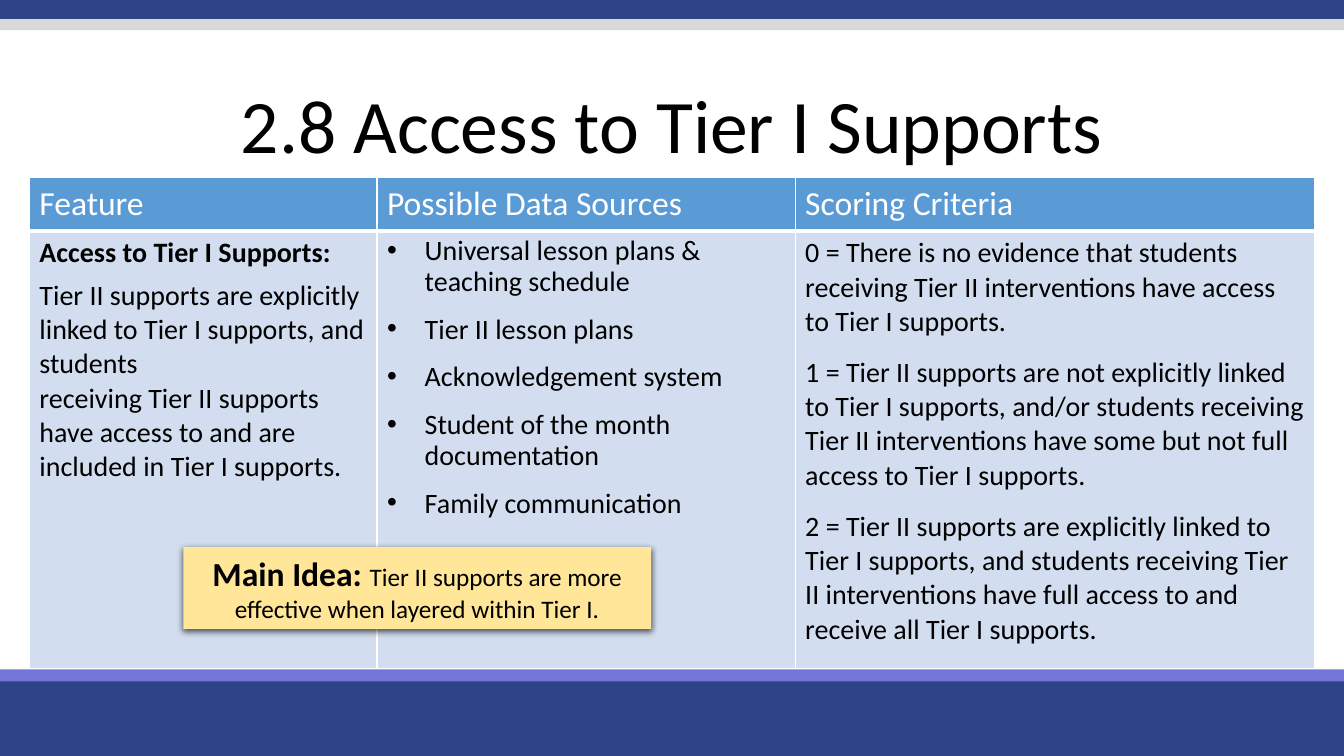
from lxml import etree
from pptx import Presentation
from pptx.dml.color import RGBColor
from pptx.enum.shapes import MSO_SHAPE as Shape
from pptx.enum.text import MSO_ANCHOR as Anchor, PP_ALIGN as Align
from pptx.oxml import parse_xml
from pptx.oxml.ns import nsdecls, qn
from pptx.util import Cm, Pt

NAVY = RGBColor(0x2E, 0x44, 0x88)
VIOLET = RGBColor(0x74, 0x76, 0xDA)
GREY = RGBColor(0xD9, 0xD9, 0xD9)
HEADER_BLUE = RGBColor(0x5B, 0x9B, 0xD5)
PALE_BLUE = RGBColor(0xD2, 0xDE, 0xEF)
YELLOW = RGBColor(0xFF, 0xE6, 0x99)
BLACK = RGBColor(0, 0, 0)
WHITE = RGBColor(0xFF, 0xFF, 0xFF)

PAGE_WIDTH, PAGE_HEIGHT = 33.87, 19.05
BULLET_INDENT = 0.95

HEADERS = ["Feature", "Possible Data Sources", "Scoring Criteria"]
FEATURE_NAME = "Access to Tier I Supports:"
FEATURE_LINES = [
    "Tier II supports are explicitly linked to Tier I supports, and students",
    "receiving Tier II supports have access to and are included in Tier I supports.",
]
SOURCES = [
    "Universal lesson plans & teaching schedule",
    "Tier II lesson plans",
    "Acknowledgement system",
    "Student of the month documentation",
    "Family communication",
]
CRITERIA = [
    "0 = There is no evidence that students receiving Tier II interventions "
    "have access to Tier I supports.",
    "1 = Tier II supports are not explicitly linked to Tier I supports, and/or "
    "students receiving Tier II interventions have some but not full access to "
    "Tier I supports.",
    "2 = Tier II supports are explicitly linked to Tier I supports, and students "
    "receiving Tier II interventions have full access to and receive all Tier I "
    "supports.",
]


class SlideBuilder:
    """Draws on one page in one font; lengths are in centimetres."""

    def __init__(self, page, font_name):
        self.page = page
        self.font_name = font_name

    def span(self, para, text, size, color=BLACK, bold=False):
        run = para.add_run()
        run.text = text
        run.font.name = self.font_name
        run.font.size = Pt(size)
        run.font.color.rgb = color
        run.font.bold = bold

    def paragraphs(self, frame, texts, size=20, gap=0, bullets=False):
        """Fill a frame with one paragraph per text, gap points apart."""
        for index, text in enumerate(texts):
            para = frame.add_paragraph() if index else frame.paragraphs[0]
            if index < len(texts) - 1:
                para.space_after = Pt(gap)
            if bullets:
                self.bullet(para)
            self.span(para, text, size)

    def bullet(self, para):
        para.line_spacing = 0.9
        properties = para._p.get_or_add_pPr()
        properties.set("marL", str(Cm(BULLET_INDENT)))
        properties.set("indent", str(-Cm(BULLET_INDENT)))
        etree.SubElement(properties, qn("a:buFont")).set("typeface", "Arial")
        etree.SubElement(properties, qn("a:buChar")).set("char", "•")

    def rectangle(self, left, top, width, height, color):
        box = self.page.shapes.add_shape(
            Shape.RECTANGLE, Cm(left), Cm(top), Cm(width), Cm(height))
        box.shadow.inherit = False
        box.fill.solid()
        box.fill.fore_color.rgb = color
        box.line.fill.background()
        return box

    def bar(self, top, height, color):
        self.rectangle(0, top, PAGE_WIDTH, height, color)

    def title(self, text, top, height):
        box = self.page.shapes.add_textbox(0, Cm(top), Cm(PAGE_WIDTH), Cm(height))
        frame = box.text_frame
        frame.word_wrap = True
        frame.vertical_anchor = Anchor.MIDDLE
        para = frame.paragraphs[0]
        para.alignment = Align.CENTER
        para.line_spacing = 0.9
        self.span(para, text, 54)

    def table(self, left, top, widths, heights):
        frame = self.page.shapes.add_table(
            len(heights), len(widths), Cm(left), Cm(top),
            Cm(sum(widths)), Cm(sum(heights)))
        grid = frame.table
        for column, width in zip(grid.columns, widths):
            column.width = Cm(width)
        for row, height in zip(grid.rows, heights):
            row.height = Cm(height)
        return grid

    def style_cell(self, cell, color, bottom=1):
        """Give a cell white borders, then its fill."""
        properties = cell._tc.get_or_add_tcPr()
        for side, points in zip("LRTB", (1, 1, 1, bottom)):
            properties.append(parse_xml(
                f'<a:ln{side} {nsdecls("a")} w="{Pt(points)}"><a:solidFill>'
                f'<a:srgbClr val="{WHITE}"/></a:solidFill></a:ln{side}>'))
        cell.fill.solid()
        cell.fill.fore_color.rgb = color

    def callout(self, left, top, width, height, label, text):
        box = self.rectangle(left, top, width, height, YELLOW)
        effects = box._element.spPr.find(qn("a:effectLst"))
        effects.append(parse_xml(
            f'<a:outerShdw {nsdecls("a")} blurRad="{Pt(4.5)}" dist="{Pt(1.5)}" '
            f'dir="5400000" rotWithShape="0"><a:srgbClr val="{BLACK}">'
            '<a:alpha val="63000"/></a:srgbClr></a:outerShdw>'))
        frame = box.text_frame
        frame.word_wrap = True
        frame.vertical_anchor = Anchor.MIDDLE
        para = frame.paragraphs[0]
        para.alignment = Align.CENTER
        self.span(para, label, 24, bold=True)
        self.span(para, text, 18)


def main():
    deck = Presentation()
    deck.slide_width, deck.slide_height = Cm(PAGE_WIDTH), Cm(PAGE_HEIGHT)
    builder = SlideBuilder(deck.slides.add_slide(deck.slide_layouts[6]), "Calibri")

    builder.bar(17.02, 2.03, NAVY)
    builder.bar(16.87, 0.3, VIOLET)
    builder.bar(0, 0.48, NAVY)
    builder.bar(0.48, 0.28, GREY)
    builder.title("2.8 Access to Tier I Supports", 1.75, 3)

    grid = builder.table(0.74, 4.47, [8.76, 10.54, 13.08], [1.35, 11.02])
    for column, header in enumerate(HEADERS):
        head, body = grid.cell(0, column), grid.cell(1, column)
        builder.style_cell(head, HEADER_BLUE, bottom=3)
        builder.style_cell(body, PALE_BLUE)
        head.vertical_anchor = Anchor.MIDDLE
        builder.span(head.text_frame.paragraphs[0], header, 24, WHITE)

    feature, sources, criteria = (grid.cell(1, c).text_frame for c in range(3))
    name = feature.paragraphs[0]
    name.space_after = Pt(6)
    builder.span(name, FEATURE_NAME, 20, bold=True)
    for line in FEATURE_LINES:
        builder.span(feature.add_paragraph(), line, 20)
    builder.paragraphs(sources, SOURCES, gap=12, bullets=True)
    builder.paragraphs(criteria, CRITERIA, gap=12)

    builder.callout(4.62, 13.79, 11.79, 2.06, "Main Idea: ",
                    "Tier II supports are more effective when layered within Tier I.")
    deck.save("out.pptx")


if __name__ == "__main__":
    main()
